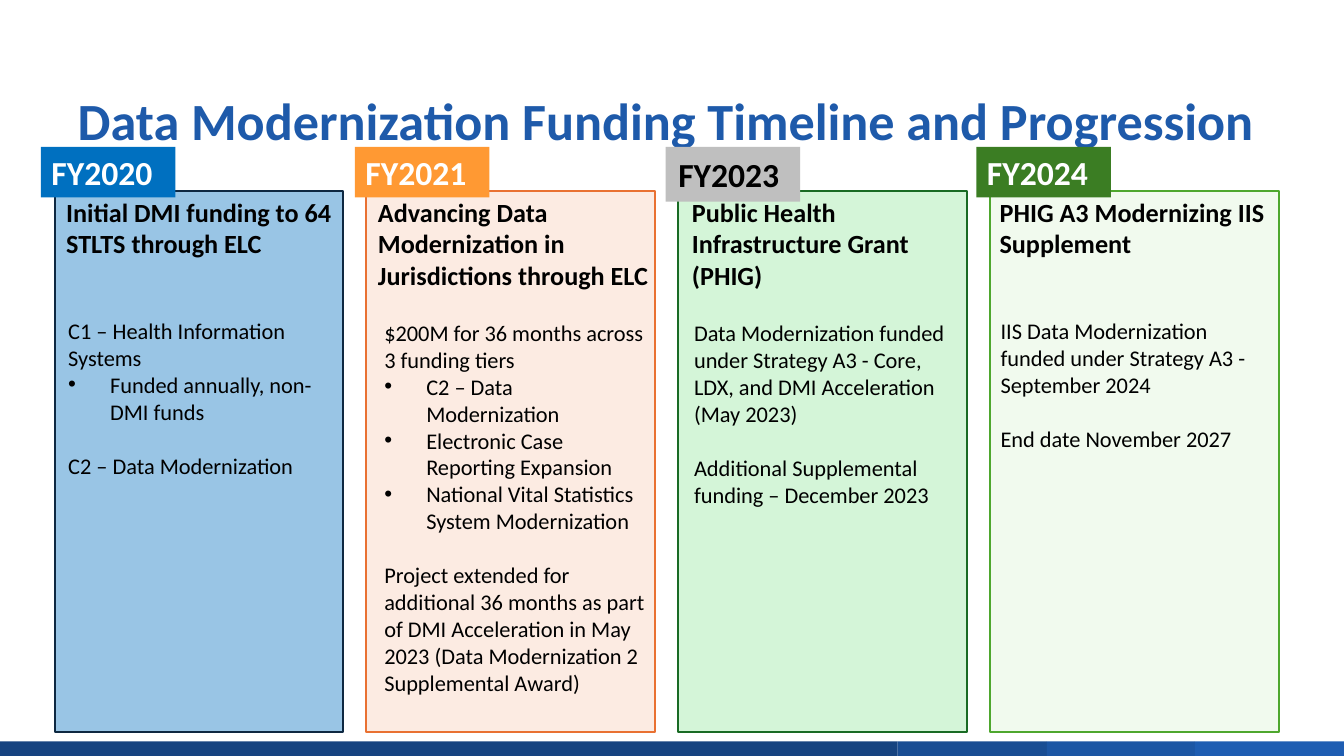
from lxml.etree import SubElement as Sub
from pptx import Presentation
from pptx.dml.color import RGBColor
from pptx.enum.shapes import MSO_SHAPE as Form
from pptx.enum.text import MSO_ANCHOR as Anchor, MSO_AUTO_SIZE as Auto, PP_ALIGN as Align
from pptx.oxml.ns import qn
from pptx.util import Pt

PX = 9525
FONT = "Calibri"
BULLET = "• "
CARD_W, CARD_H = 275, 515
STEP = 297
GAP = 19.5
INDENT = 40

FOOTER = [(0, 855, "164380"), (855, 142, "194D93"), (997, 141, "1C56A4"), (1138, 142, "1E5DB2")]

CARDS = [
    dict(year="FY2020", tag="0070C0", ink="FFFFFF", tag_x=-13, tag_h=48,
         fill="0070C0", alpha=40, line="0E2841",
         head="Initial DMI funding to 64 STLTS through ELC", head_x=1, head_w=286,
         body_x=3, body_w=275, pad=(10, 5),
         body=[("C1 – Health Information Systems", 0),
               (BULLET + "Funded annually, non-DMI funds", 0),
               ("C2 – Data Modernization", GAP)]),
    dict(year="FY2021", tag="FF9933", ink="FFFFFF", tag_x=-11, tag_h=48,
         fill="FBE3D6", alpha=70, line="E97132",
         head="Advancing Data Modernization in Jurisdictions through ELC", head_x=1, head_w=289,
         body_x=5, body_w=272, pad=(12, 7),
         body=[("$200M for 36 months across 3 funding tiers", 0),
               (BULLET + "C2 – Data Modernization", 0),
               (BULLET + "Electronic Case Reporting Expansion", 0),
               (BULLET + "National Vital Statistics System Modernization", 0),
               ("Project extended for additional 36 months as part of DMI Acceleration "
                "in May 2023 (Data Modernization 2 Supplemental Award)", GAP)]),
    dict(year="FY2023", tag="BFBFBF", ink="000000", tag_x=-12, tag_h=52,
         fill="C2F1C8", alpha=70, line="196B24",
         head="Public Health Infrastructure Grant (PHIG)", head_x=3, head_w=275,
         body_x=3, body_w=272, pad=(12, 7),
         body=[("Data Modernization funded under Strategy A3 - Core, LDX, "
                "and DMI Acceleration (May 2023)", 0),
               ("Additional Supplemental funding – December 2023", GAP)]),
    dict(year="FY2024", tag="3B7D23", ink="FFFFFF", tag_x=-13, tag_h=48,
         fill="ECF9E8", alpha=70, line="4EA72E",
         head="PHIG A3 Modernizing IIS Supplement", head_x=-1, head_w=288,
         body_x=0, body_w=275, pad=(10, 5),
         body=[("IIS Data Modernization funded under Strategy A3 - September 2024", 0),
               ("End date November 2027", GAP)]),
]


def color(code):
    return RGBColor.from_string(code)


def scale(*sizes):
    return [size * PX for size in sizes]


def block(slide, box, fill, line=None, alpha=None):
    shape = slide.shapes.add_shape(Form.RECTANGLE, *scale(*box))
    shape.shadow.inherit = False
    shape.fill.solid()
    shape.fill.fore_color.rgb = color(fill)
    if alpha:
        tint = shape.element.spPr.find(qn("a:solidFill")).find(qn("a:srgbClr"))
        Sub(tint, qn("a:alpha"), val=str(alpha * 1000))
    if line:
        shape.line.color.rgb = color(line)
        shape.line.width = Pt(1.5)
    else:
        shape.line.fill.background()
    return shape


def setup(frame, pad=(10, 5), anchor=Anchor.TOP):
    frame.word_wrap = True
    frame.auto_size = Auto.NONE
    frame.vertical_anchor = anchor
    frame.margin_left = frame.margin_right = pad[0] * PX
    frame.margin_top = frame.margin_bottom = pad[1] * PX


def write(para, text, size, ink, bold=False):
    para.alignment = Align.LEFT
    run = para.add_run()
    run.text = text
    font = run.font
    font.name, font.size, font.bold = FONT, Pt(size), bold
    font.color.rgb = color(ink)


def label(slide, box, pad=(10, 5)):
    frame = slide.shapes.add_textbox(*scale(*box)).text_frame
    setup(frame, pad)
    return frame


def bullet(para):
    props = para._p.get_or_add_pPr()
    props.set("marL", str(INDENT * PX))
    props.set("indent", str(-INDENT * PX))
    Sub(props, qn("a:buFont"), typeface="Arial")
    Sub(props, qn("a:buChar"), char=BULLET.strip())


def title(slide, box):
    shape = slide.shapes.title
    shape.left, shape.top, shape.width, shape.height = scale(*box)
    setup(shape.text_frame, anchor=Anchor.BOTTOM)
    para = shape.text_frame.paragraphs[0]
    para.line_spacing = Pt(40)
    write(para, "Data Modernization Funding Timeline and Progression", 37.3, "1E5AAA", True)


def footer(slide, top, high):
    for left, wide, fill in FOOTER:
        block(slide, (left, top, wide, high), fill)


def card(slide, left, top, data):
    block(slide, (left, top, CARD_W, CARD_H), data["fill"], data["line"], data["alpha"])

    tag = block(slide, (left + data["tag_x"], top - 42, 128, data["tag_h"]), data["tag"])
    setup(tag.text_frame, data["pad"] if data["tag_h"] > 48 else (10, 5))
    write(tag.text_frame.paragraphs[0], data["year"], 24, data["ink"], True)

    head = label(slide, (left + data["head_x"], top, data["head_w"], 100))
    write(head.paragraphs[0], data["head"], 18.7, "000000", True)

    body = label(slide, (left + data["body_x"], top + 115, data["body_w"], 400), data["pad"])
    for order, (text, gap) in enumerate(data["body"]):
        para = body.add_paragraph() if order else body.paragraphs[0]
        para.space_before = Pt(gap)
        if text.startswith(BULLET):
            bullet(para)
        write(para, text.removeprefix(BULLET), 16, "000000")


def main():
    deck = Presentation()
    deck.slide_width, deck.slide_height = scale(1280, 720)
    slide = deck.slides.add_slide(deck.slide_layouts[5])
    footer(slide, 706, 14)
    title(slide, (64, 29, 1152, 120))
    for order, data in enumerate(CARDS):
        card(slide, 52 + order * STEP, 182, data)
    deck.save("out.pptx")


if __name__ == "__main__":
    main()
